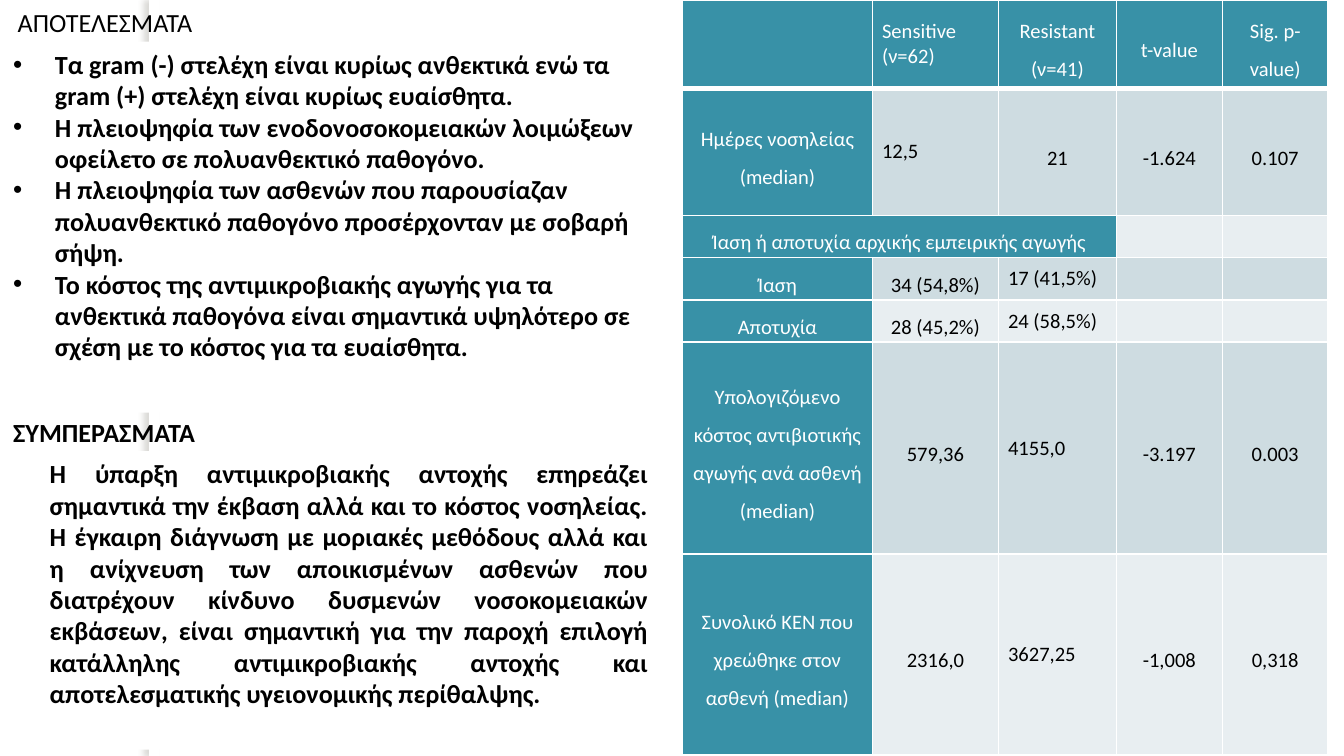
from lxml import etree
from pptx import Presentation
from pptx import util as u
from pptx.dml.color import RGBColor
from pptx.enum import shapes, text
from pptx.oxml import parse_xml
from pptx.oxml.ns import nsdecls, qn

Cm, Pt = u.Cm, u.Pt
COLORS = {"teal": "3891A7", "band_dark": "CEDCE1", "band_light": "E8EEF1",
          "white": "FFFFFF", "black": "000000", "shadow": "736F63"}

FINDINGS = [
    "Τα gram (-) στελέχη είναι κυρίως ανθεκτικά ενώ τα gram (+) στελέχη είναι κυρίως ευαίσθητα.",
    "Η πλειοψηφία των ενοδονοσοκομειακών λοιμώξεων οφείλετο σε πολυανθεκτικό παθογόνο.",
    "Η πλειοψηφία των ασθενών που παρουσίαζαν πολυανθεκτικό παθογόνο "
    "προσέρχονταν με σοβαρή σήψη.",
    "Το κόστος της αντιμικροβιακής αγωγής για τα ανθεκτικά παθογόνα είναι σημαντικά "
    "υψηλότερο σε σχέση με το κόστος για τα ευαίσθητα.",
]
CONCLUSION = (
    "Η ύπαρξη αντιμικροβιακής αντοχής επηρεάζει σημαντικά την έκβαση αλλά και το κόστος "
    "νοσηλείας. Η έγκαιρη διάγνωση με μοριακές μεθόδους αλλά και η ανίχνευση των "
    "αποικισμένων ασθενών που διατρέχουν κίνδυνο δυσμενών νοσοκομειακών εκβάσεων, είναι "
    "σημαντική για την παροχή επιλογή κατάλληλης αντιμικροβιακής αντοχής και "
    "αποτελεσματικής υγειονομικής περίθαλψης."
)
COMPARISON = [
    ["", "Sensitive (ν=62)", "Resistant (ν=41)", "t-value", "Sig. p-value)"],
    ["Ημέρες νοσηλείας (median)", "12,5", "21", "-1.624", "0.107"],
    ["Ίαση ή αποτυχία αρχικής εμπειρικής αγωγής", "", "", "", ""],
    ["Ίαση", "34 (54,8%)", "17 (41,5%)", "", ""],
    ["Αποτυχία", "28 (45,2%)", "24 (58,5%)", "", ""],
    ["Υπολογιζόμενο κόστος αντιβιοτικής αγωγής ανά ασθενή (median)",
     "579,36", "4155,0", "-3.197", "0.003"],
    ["Συνολικό ΚΕΝ που χρεώθηκε στον ασθενή (median)",
     "2316,0", "3627,25", "-1,008", "0,318"],
]
COLUMN_WIDTHS = [3.59, 2.38, 2.23, 2, 2]
ROW_HEIGHTS = [1.67, 2.4, 0.8, 0.8, 0.8, 4, 3.8]
LEFT_ALIGNED = {(0, 1), (1, 1), (3, 2), (4, 2), (5, 2), (6, 2)}


def rgb(name):
    return RGBColor.from_string(COLORS[name])


def format_runs(paragraph, size, color="black", bold=False):
    for run in paragraph.runs:
        run.font.name = "Calibri"
        run.font.size = Pt(size)
        run.font.bold = bold
        run.font.color.rgb = rgb(color)


def place(shape, left, top, width, height):
    shape.left, shape.top = Cm(left), Cm(top)
    shape.width, shape.height = Cm(width), Cm(height)


def add_panel(slide, left, top, width, height):
    panel = slide.shapes.add_shape(shapes.MSO_SHAPE.RECTANGLE,
                                   Cm(left), Cm(top), Cm(width), Cm(height))
    panel.shadow.inherit = False
    panel.fill.solid()
    panel.fill.fore_color.rgb = rgb("white")
    panel.line.fill.background()
    return panel


def add_shadow_strip(slide):
    strip = add_panel(slide, 2.82, 0, 0.2, 14.29)
    effects = strip.fill._xPr.find(qn("a:effectLst"))
    effects.append(parse_xml(
        f'<a:outerShdw {nsdecls("a")} blurRad="{Pt(3)}" dist="{Pt(3)}" dir="10800000">'
        f'<a:srgbClr val="{COLORS["shadow"]}"><a:alpha val="25000"/></a:srgbClr>'
        '</a:outerShdw>'))
    # Keep the strip behind the title
    slide.shapes._spTree.insert(2, strip._element)


def add_text_panel(slide, box, paragraphs, align, bulleted=False):
    frame = add_panel(slide, *box).text_frame
    frame.word_wrap = True
    frame.vertical_anchor = text.MSO_ANCHOR.TOP
    frame.text = "\n".join(paragraphs)
    for paragraph in frame.paragraphs:
        paragraph.alignment = align
        format_runs(paragraph, 14, bold=True)
        if bulleted:
            properties = paragraph._p.get_or_add_pPr()
            properties.set("marL", str(Cm(0.79)))
            properties.set("indent", str(-Cm(0.79)))
            etree.SubElement(properties, qn("a:buFont")).set("typeface", "Arial")
            etree.SubElement(properties, qn("a:buChar")).set("char", "•")


def format_heading(heading, wrap):
    frame = heading.text_frame
    frame.word_wrap = wrap
    frame.auto_size = text.MSO_AUTO_SIZE.SHAPE_TO_FIT_TEXT
    frame.vertical_anchor = text.MSO_ANCHOR.TOP
    frame.paragraphs[0].alignment = text.PP_ALIGN.LEFT
    format_runs(frame.paragraphs[0], 14, bold=wrap)


def set_borders(cell, bottom):
    properties = cell._tc.get_or_add_tcPr()
    widths = {"lnL": 1, "lnR": 1, "lnT": 1, "lnB": bottom}
    for index, (side, width) in enumerate(widths.items()):
        properties.insert(index, parse_xml(
            f'<a:{side} {nsdecls("a")} w="{Pt(width)}"><a:solidFill>'
            f'<a:srgbClr val="{COLORS["white"]}"/></a:solidFill></a:{side}>'))


def format_cell(cell, content, row, column):
    label = row == 0 or column == 0
    band = "band_dark" if row % 2 else "band_light"
    cell.fill.solid()
    cell.fill.fore_color.rgb = rgb("teal" if label else band)
    set_borders(cell, bottom=1 if row else 3)
    cell.margin_left = cell.margin_right = Cm(0.18)
    cell.margin_top = cell.margin_bottom = 0
    cell.vertical_anchor = text.MSO_ANCHOR.MIDDLE
    if content:
        cell.text_frame.text = content
        paragraph = cell.text_frame.paragraphs[0]
        if (row, column) not in LEFT_ALIGNED:
            paragraph.alignment = text.PP_ALIGN.CENTER
            paragraph.line_spacing = 1.5
        format_runs(paragraph, 11, "white" if label else "black")


def add_comparison_table(slide):
    table = slide.shapes.add_table(
        len(ROW_HEIGHTS), len(COLUMN_WIDTHS), Cm(12.9), 0,
        Cm(sum(COLUMN_WIDTHS)), Cm(sum(ROW_HEIGHTS))).table
    for column, width in zip(table.columns, COLUMN_WIDTHS):
        column.width = Cm(width)
    for row, height in zip(table.rows, ROW_HEIGHTS):
        row.height = Cm(height)
    for r, contents in enumerate(COMPARISON):
        for c, content in enumerate(contents):
            format_cell(table.cell(r, c), content, r, c)
    table.cell(2, 0).merge(table.cell(2, 2))


def main():
    deck = Presentation()
    deck.slide_width, deck.slide_height = Cm(25.4), Cm(14.29)
    slide = deck.slides.add_slide(deck.slide_layouts[5])

    # Background strip and results heading
    add_shadow_strip(slide)
    title = slide.shapes.title
    title.text_frame.text = "ΑΠΟΤΕΛΕΣΜΑΤΑ"
    place(title, 0.08, 0, 4.22, 0.86)
    format_heading(title, wrap=False)

    # Comparison of sensitive and resistant strains
    add_comparison_table(slide)

    # Findings
    add_text_panel(slide, (0, 0.79, 12.5, 7.01), FINDINGS,
                   text.PP_ALIGN.LEFT, bulleted=True)

    # Conclusions
    conclusions = slide.shapes.add_textbox(0, Cm(7.75), Cm(4.78), Cm(0.86))
    conclusions.text_frame.text = "ΣΥΜΠΕΡΑΣΜΑΤΑ"
    format_heading(conclusions, wrap=True)
    add_text_panel(slide, (0.69, 8.53, 11.81, 5.64), [CONCLUSION],
                   text.PP_ALIGN.JUSTIFY)

    deck.save("out.pptx")


if __name__ == "__main__":
    main()
